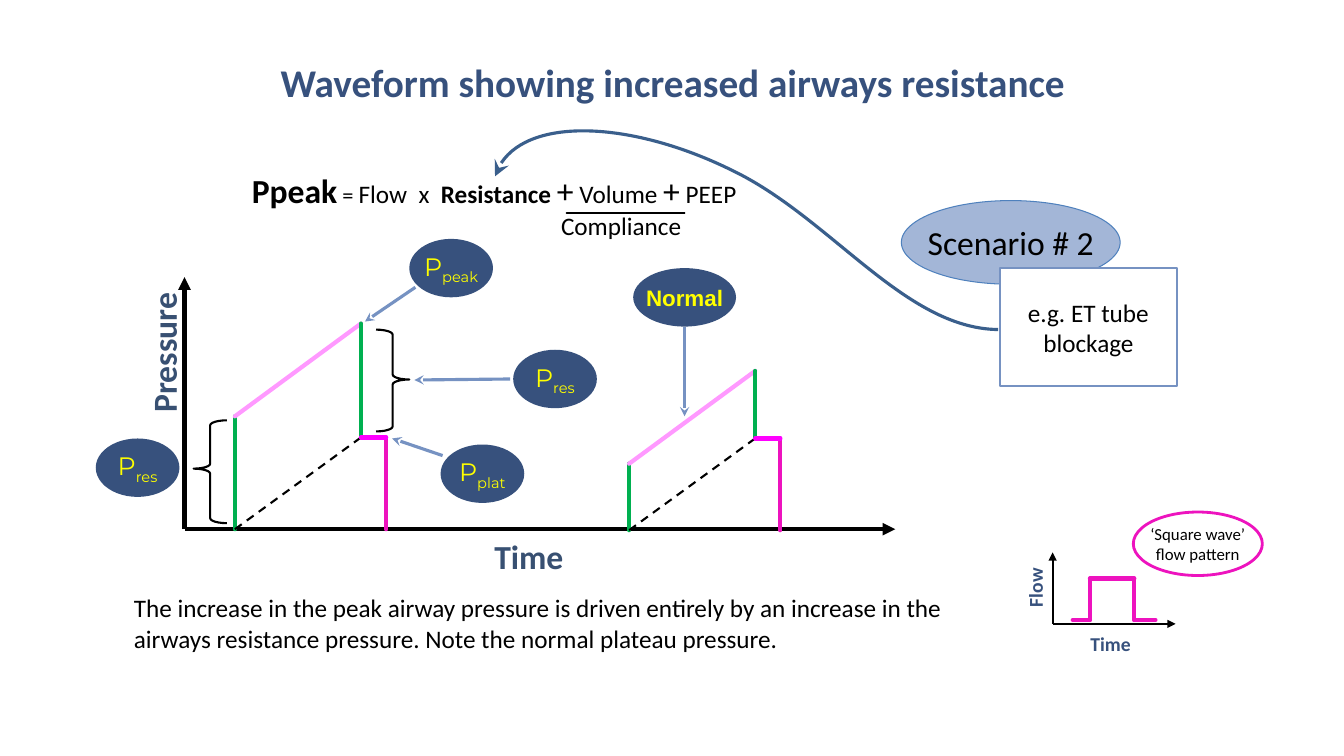
from itertools import pairwise

from lxml.etree import SubElement
from pptx import Presentation
from pptx.dml.color import RGBColor
from pptx.enum.dml import MSO_LINE_DASH_STYLE as Dash
from pptx.enum.shapes import MSO_CONNECTOR as Link, MSO_SHAPE as Preset
from pptx.enum.text import MSO_ANCHOR as Anchor, MSO_AUTO_SIZE as Fit, PP_ALIGN as Align
from pptx.oxml.ns import qn
from pptx.util import Inches, Pt

BLACK = RGBColor(0x00, 0x00, 0x00)
WHITE = RGBColor(0xFF, 0xFF, 0xFF)
NAVY = RGBColor(0x37, 0x51, 0x7D)
SLATE = RGBColor(0x38, 0x50, 0x72)
STEEL = RGBColor(0x76, 0x92, 0xC2)
CURVE_BLUE = RGBColor(0x3A, 0x5F, 0x8C)
PALE_BLUE = RGBColor(0xA3, 0xB6, 0xD7)
EDGE_BLUE = RGBColor(0x4F, 0x81, 0xBD)
YELLOW = RGBColor(0xFF, 0xFF, 0x00)
GREEN = RGBColor(0x00, 0xB0, 0x50)
PINK = RGBColor(0xFF, 0x99, 0xFF)
MAGENTA = RGBColor(0xFF, 0x00, 0xFF)
CERISE = RGBColor(0xED, 0x13, 0xBE)


def write(shape, lines, colour, font="Calibri", align=Align.CENTER, anchor=Anchor.MIDDLE, wrap=False):
    frame = shape.text_frame
    frame.word_wrap = wrap
    frame.vertical_anchor = anchor
    for index, spans in enumerate(lines):
        para = frame.add_paragraph() if index else frame.paragraphs[0]
        para.alignment = align
        for text, size, bold in spans:
            span = para.add_run()
            span.text = text
            span.font.name = font
            span.font.size = Pt(size)
            span.font.bold = bold
            span.font.color.rgb = colour
    return frame


def stroke(points, colour, width, arrow=None, dashed=False):
    for (x1, y1), (x2, y2) in pairwise(points):
        link = page.shapes.add_connector(Link.STRAIGHT, Inches(x1), Inches(y1), Inches(x2), Inches(y2))
        link.line.color.rgb = colour
        link.line.width = Pt(width)
        outline = link.line._get_or_add_ln()
        if dashed:
            link.line.dash_style = Dash.DASH
        elif arrow:
            SubElement(outline, qn("a:tailEnd"), type=arrow)
        else:
            outline.set("cap", "rnd")
        SubElement(link._element.spPr, qn("a:effectLst"))


deck = Presentation()
deck.slide_width = Inches(13.33)
deck.slide_height = Inches(7.5)
page = deck.slides.add_slide(deck.slide_layouts[5])

title = page.shapes.title
title.left, title.top, title.width, title.height = Inches(0.92), Inches(0.07), Inches(11.5), Inches(1.03)
heading = write(title, [[("Waveform showing increased airways resistance", 28, True)]], NAVY,
                anchor=Anchor.BOTTOM, wrap=True)
heading.auto_size = Fit.NONE
heading.paragraphs[0].line_spacing = 0.9

equation = [
    [("Ppeak", 24, True), (" = ", 16, False), ("Flow  x  ", 18, False), ("Resistance ", 18, True),
     ("+", 24, False), (" Volume ", 18, False), ("+", 24, False), (" PEEP", 18, False)],
    [("Compliance", 18, False)],
]
box = page.shapes.add_textbox(Inches(1.94), Inches(1.58), Inches(5.92), Inches(0.92))
formula = write(box, equation, BLACK, wrap=True)
formula.paragraphs[1]._p.get_or_add_pPr().set("marL", str(Inches(2.52)))
stroke([(5.62, 2.11), (6.79, 2.11)], BLACK, 1.25)

for left, top, width, height, text, size, colour, turn in [
    (10.74, 6.27, 0.55, 0.24, "Time", 14, NAVY, 0),
    (9.99, 5.71, 0.55, 0.24, "Flow", 14, NAVY, 270),
    (4.62, 5.31, 1.25, 0.42, "Time", 24, SLATE, 0),
    (0.92, 3.29, 1.4, 0.42, "Pressure", 24, SLATE, 270),
]:
    box = page.shapes.add_textbox(Inches(left), Inches(top), Inches(width), Inches(height))
    box.rotation = turn
    axis_label = write(box, [[(text, size, True)]], colour)
    axis_label.margin_left = axis_label.margin_right = Inches(0)
    axis_label.margin_top = axis_label.margin_bottom = Inches(0)

for corner, right, top, width in [((10.44, 6.19), 11.66, 5.48, 1.5), ((1.83, 5.25), 8.88, 2.75, 3)]:
    stroke([corner, (right, corner[1])], BLACK, width, "triangle")
    stroke([corner, (corner[0], top)], BLACK, width, "triangle")

stroke([(10.64, 6.15), (10.81, 6.15), (10.81, 5.74), (11.25, 5.74), (11.25, 6.15), (11.46, 6.15)], CERISE, 3)

for start, base, rise, peak, plateau in [(2.33, 5.25, 4.13, 3.21, 4.34), (6.24, 5.26, 4.6, 3.68, 4.35)]:
    crest, end = start + 1.25, start + 1.5
    stroke([(start, base), (start, rise)], GREEN, 3)
    stroke([(start, rise), (crest, peak)], PINK, 3)
    stroke([(end, plateau), (end, base)], CERISE, 3)
    stroke([(crest, plateau), (crest, peak)], GREEN, 3)
    stroke([(start, base), (crest, plateau)], BLACK, 1.5, dashed=True)
    stroke([(crest, plateau), (end, plateau)], MAGENTA, 3)

for pointer in [
    [(4.12, 2.85), (3.62, 3.19)],
    [(4.39, 4.52), (3.89, 4.35)],
    [(5.06, 3.76), (4.11, 3.77)],
    [(6.79, 3.24), (6.79, 4.13)],
]:
    stroke(pointer, STEEL, 2.25, "stealth")

for preset, left, top, height, middle in [
    (Preset.LEFT_BRACE, 1.92, 4.17, 1.02, 0.47),
    (Preset.RIGHT_BRACE, 3.73, 3.27, 1.01, 0.49),
]:
    brace = page.shapes.add_shape(preset, Inches(left), Inches(top), Inches(0.33), Inches(height))
    brace.shadow.inherit = False
    brace.adjustments[0] = 0.15
    brace.adjustments[1] = middle
    brace.fill.background()
    brace.line.color.rgb = BLACK
    brace.line.width = Pt(1.5)

for left, top, suffix in [(4.06, 2.37, "peak"), (0.95, 4.35, "res"), (4.37, 4.41, "plat"), (5.09, 3.47, "res")]:
    bubble = page.shapes.add_shape(Preset.OVAL, Inches(left), Inches(top), Inches(0.83), Inches(0.58))
    bubble.shadow.inherit = False
    bubble.fill.solid()
    bubble.fill.fore_color.rgb = NAVY
    bubble.line.fill.background()
    label = write(bubble, [[("P", 18, False), (suffix, 18, False)]], YELLOW, "Montserrat")
    label.paragraphs[0].runs[1]._r.get_or_add_rPr().set("baseline", "-25000")

for preset, left, top, width, height, fill, edge, weight, lines, size, font, colour, bold in [
    (Preset.OVAL, 8.94, 1.99, 2.17, 0.83, PALE_BLUE, EDGE_BLUE, 0.75,
     ["Scenario # 2"], 24, "Calibri", BLACK, False),
    (Preset.RECTANGLE, 9.92, 2.66, 1.75, 1.17, WHITE, STEEL, 1.5,
     ["e.g. ET tube", "blockage"], 18, "Calibri", BLACK, False),
    (Preset.OVAL, 6.28, 2.66, 1.02, 0.58, NAVY, None, 0,
     ["Normal"], 16, "Arial", YELLOW, True),
    (Preset.OVAL, 11.24, 5.08, 1.28, 0.63, None, CERISE, 2,
     ["‘Square wave’", "flow pattern"], 12, "Calibri", BLACK, False),
]:
    callout = page.shapes.add_shape(preset, Inches(left), Inches(top), Inches(width), Inches(height))
    callout.shadow.inherit = False
    if fill:
        callout.fill.solid()
        callout.fill.fore_color.rgb = fill
    else:
        callout.fill.background()
    if edge:
        callout.line.color.rgb = edge
        callout.line.width = Pt(weight)
    else:
        callout.line.fill.background()
    write(callout, [[(line, size, bold)] for line in lines], colour, font)

curve_left, curve_top = 4.91, 1.31
builder = page.shapes.build_freeform(Inches(curve_left), Inches(1.75))
builder.add_line_segments([(Inches(7.26), Inches(curve_top)), (Inches(9.9), Inches(3.27))], close=False)
curve = builder.convert_to_shape()
curve.shadow.inherit = False
curve.fill.background()
curve.line.color.rgb = CURVE_BLUE
curve.line.width = Pt(2.25)
SubElement(curve.line._get_or_add_ln(), qn("a:headEnd"), type="stealth", w="lg", len="lg")
route = next(curve._element.iter(qn("a:path")))
for segment in route.findall(qn("a:lnTo")):
    route.remove(segment)
for bend in [[(5.09, 1.14), (6.29, 1.21), (7.26, 1.69)], [(8.24, 2.16), (8.97, 3.26), (9.9, 3.27)]]:
    arc = SubElement(route, qn("a:cubicBezTo"))
    for x, y in bend:
        SubElement(arc, qn("a:pt"), x=str(Inches(x - curve_left)), y=str(Inches(y - curve_top)))

box = page.shapes.add_textbox(Inches(1.23), Inches(5.83), Inches(8.24), Inches(0.71))
summary = ("The increase in the peak airway pressure is driven entirely by an increase in the "
           "airways resistance pressure. Note the normal plateau pressure.")
note = write(box, [[(summary, 18, False)]], BLACK, align=Align.LEFT, anchor=Anchor.TOP, wrap=True)
note.auto_size = Fit.SHAPE_TO_FIT_TEXT

deck.save("out.pptx")
